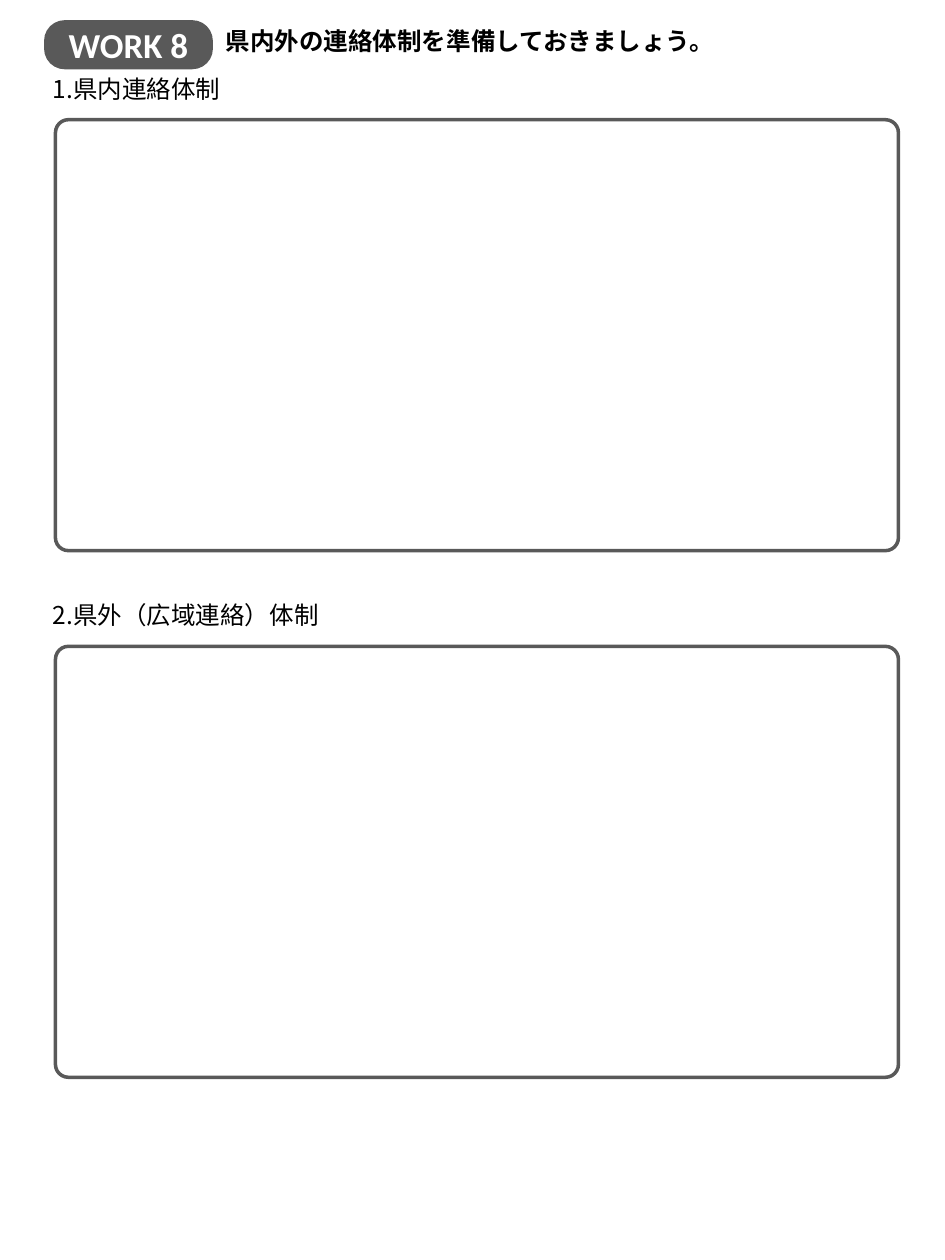
from typing import NamedTuple

from lxml.etree import SubElement
from pptx import Presentation
from pptx.dml.color import RGBColor
from pptx.enum.shapes import MSO_SHAPE
from pptx.enum.text import MSO_ANCHOR, MSO_AUTO_SIZE, PP_ALIGN
from pptx.oxml.ns import qn
from pptx.util import Inches, Pt

COLORS = {"gray": "595959", "white": "FFFFFF", "black": "000000"}
JP_FONT = "Noto Sans CJK JP"
TEXT_W, TEXT_H = 6.03, 0.34


class Section(NamedTuple):
    heading: str
    heading_top: float
    box_top: float


SECTIONS = [
    Section("1.県内連絡体制", 0.54, 0.95),
    Section("2.県外（広域連絡）体制", 4.71, 5.13),
]


def rgb(name: str) -> RGBColor:
    return RGBColor.from_string(COLORS[name])


def write(shape, text: str, font: str = JP_FONT, size: float = 14,
          bold: bool = False, color: str = "black",
          align: PP_ALIGN = PP_ALIGN.LEFT,
          anchor: MSO_ANCHOR = MSO_ANCHOR.TOP) -> None:
    tf = shape.text_frame
    frame_format = {"word_wrap": True, "vertical_anchor": anchor,
                    "auto_size": MSO_AUTO_SIZE.NONE}
    for name, value in frame_format.items():
        setattr(tf, name, value)
    p = tf.paragraphs[0]
    p.alignment = align
    r = p.add_run()
    r.text = text
    for name, value in {"name": font, "size": Pt(size), "bold": bold}.items():
        setattr(r.font, name, value)
    r.font.color.rgb = rgb(color)
    SubElement(r.font._element, qn("a:ea")).set("typeface", font)


def add_round_box(s, left: float, top: float, width: float, height: float,
                  corner: float):
    sp = s.shapes.add_shape(MSO_SHAPE.ROUNDED_RECTANGLE, Inches(left),
                            Inches(top), Inches(width), Inches(height))
    sp.adjustments[0] = corner
    sp.shadow.inherit = False
    return sp


def add_title(s, text: str) -> None:
    title = s.shapes.title
    place = {"left": 1.69, "top": 0.16, "width": TEXT_W, "height": TEXT_H}
    for name, value in place.items():
        setattr(title, name, Inches(value))
    write(title, text, bold=True)


def add_badge(s, text: str) -> None:
    badge = add_round_box(s, 0.35, 0.16, 1.34, 0.39, 0.42)
    badge.fill.solid()
    badge.fill.fore_color.rgb = rgb("gray")
    badge.line.fill.background()
    write(badge, text, font="Calibri", size=20, bold=True, color="white",
          align=PP_ALIGN.CENTER, anchor=MSO_ANCHOR.MIDDLE)


def add_section(s, section: Section) -> None:
    """Add a heading with an empty answer box under it."""
    heading = s.shapes.add_textbox(Inches(0.32), Inches(section.heading_top),
                                   Inches(TEXT_W), Inches(TEXT_H))
    write(heading, section.heading)
    box = add_round_box(s, 0.44, section.box_top, 6.69, 3.42, 0.03)
    box.fill.background()
    box.line.color.rgb = rgb("gray")
    box.line.width = Pt(2)


def main() -> None:
    prs = Presentation()
    prs.slide_width, prs.slide_height = Inches(7.5), Inches(10)
    s = prs.slides.add_slide(prs.slide_layouts[5])
    add_title(s, "県内外の連絡体制を準備しておきましょう。")
    add_badge(s, "WORK 8")
    for section in SECTIONS:
        add_section(s, section)
    prs.save("out.pptx")


if __name__ == "__main__":
    main()
